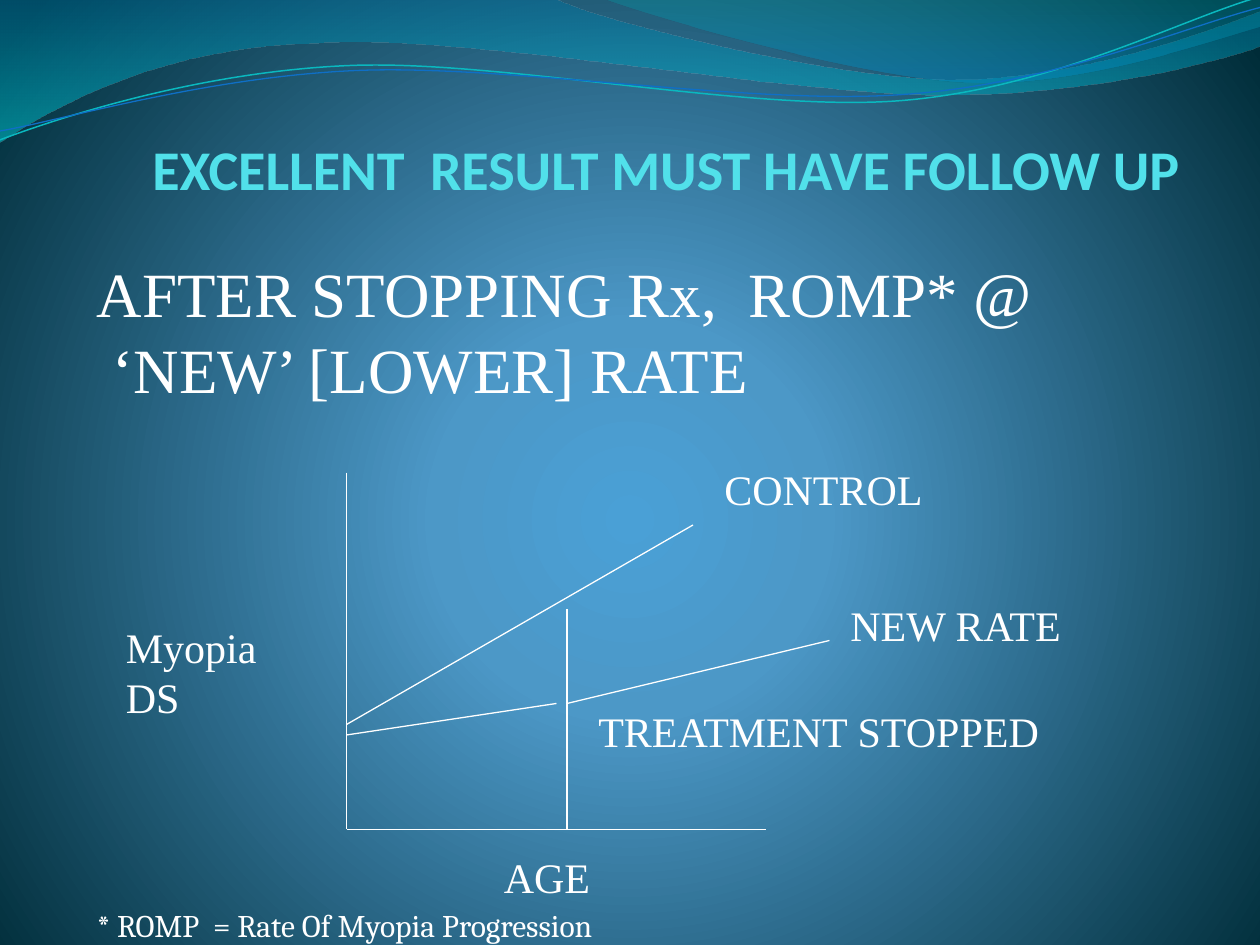
from math import cos, radians, sin

from lxml import etree
from pptx import Presentation
from pptx.dml.color import RGBColor as Rgb
from pptx.enum.shapes import MSO_CONNECTOR as Link
from pptx.enum.text import MSO_ANCHOR as Anchor, MSO_AUTO_SIZE as Fit, PP_ALIGN as Align
from pptx.oxml import parse_xml
from pptx.oxml.ns import nsdecls, qn
from pptx.util import Inches, Pt

HUE = {"text": "FFFFFF", "title": "51E0EA", "teal": "0AB8BF", "blue": "0F6FC6"}
# Gradient stops: position, colour, opacity (all in percent)
GRAD = {
    "back": [(0, "4AA0D6", 100), (25, "4C98C7", 100), (100, "002C38", 100)],
    "wide": [(0, "0074A1", 45), (100, "00C6CF", 55)],
    "right": [(0, "00A1A9", 30), (80, "008BBF", 45)],
}
DOWN = '<a:lin ang="5400000" scaled="0"/>'
ROUND = ('<a:path path="circle"><a:fillToRect l="10000" t="110000" '
         'r="10000" b="100000"/></a:path>')
TILT = 2.7  # degrees by which the thin waves lean to the left

# Curves: a start point, then Bezier triples or straight-line ends
WIDE = [[(0, 0)], [(4.4, -.01)], [(4.76, .17), (6.64, .63), (7.58, .63)],
        [(8.53, .63), (9.58, .26), (10, .09)], [(10.01, .36)],
        [(9.83, .44), (8.7, .76), (7.46, .75)],
        [(6.22, .75), (3.82, .28), (2.57, .34)],
        [(1.29, .36), (.46, .83), (-.01, 1.13)]]
RIGHT = [[(4.79, -.01)], [(5.09, .11), (6.82, .62), (7.69, .65)],
         [(8.56, .69), (9.61, .32), (10, .21)], [(10, 0)]]
TEAL = [[(0, 1.11)], [(.48, .93), (1.58, .57), (2.77, .52)],
        [(3.95, .47), (5.93, .89), (7.13, .8)],
        [(8.33, .71), (9.38, .15), (9.98, -.02)]]
BLUE = [[(0, 1.04)], [(.47, .96), (1.64, .61), (2.83, .56)],
        [(4.03, .51), (5.97, .84), (7.17, .75)],
        [(8.36, .67), (9.41, .21), (10, .06)]]


def grad(name, shade):
    stops = "".join(
        f'<a:gs pos="{pos * 1000}"><a:srgbClr val="{hue}">'
        f'<a:alpha val="{alpha * 1000}"/></a:srgbClr></a:gs>'
        for pos, hue, alpha in GRAD[name])
    return (f'<a:gradFill {nsdecls("a")} rotWithShape="1">'
            f'<a:gsLst>{stops}</a:gsLst>{shade}</a:gradFill>')


def level(curve, mid):
    """Turn a leaning curve upright around its middle."""
    c, s = cos(radians(TILT)), sin(radians(TILT))
    return [[(mid[0] + (x - mid[0]) * c - (y - mid[1]) * s,
              mid[1] + (x - mid[0]) * s + (y - mid[1]) * c) for x, y in part]
            for part in curve]


def wave(shapes, curve, closed):
    dots = [(Inches(x), Inches(y)) for part in curve for x, y in part]
    form = shapes.build_freeform(*dots[0])
    form.add_line_segments(dots[1:], close=closed)
    shape = form.convert_to_shape()
    # Join each triple of line ends into one Bezier segment
    ends = iter(list(shape.element.iter(qn("a:lnTo"))))
    for part in curve[1:]:
        first, *rest = [next(ends) for _ in part]
        if rest:
            first.tag = qn("a:cubicBezTo")
        for end in rest:
            first.append(end[0])
            end.getparent().remove(end)
    shape.shadow.inherit = False
    shape.fill.background()
    return shape


def backdrop(slide):
    fill = slide.background.fill
    fill.solid()
    props = slide.element.cSld.find(qn("p:bg")).find(qn("p:bgPr"))
    props.replace(props.find(qn("a:solidFill")), parse_xml(grad("back", ROUND)))
    # Filled waves
    for curve, name in ((WIDE, "wide"), (RIGHT, "right")):
        shape = wave(slide.shapes, curve, True)
        shape.line.fill.background()
        props = shape.element.spPr
        props.replace(props.find(qn("a:noFill")), parse_xml(grad(name, DOWN)))
    # Thin waves
    pair = slide.shapes.add_group_shape()
    for curve, mid, name, width in ((TEAL, (4.99, .58), "teal", .85),
                                    (BLUE, (5, .59), "blue", .75)):
        shape = wave(pair.shapes, level(curve, mid), False)
        shape.rotation = 360 - TILT
        shape.line.color.rgb = Rgb.from_string(HUE[name])
        shape.line.width = Pt(width)


def style(font, size, face, hue="text"):
    font.size, font.name = Pt(size), face
    font.color.rgb = Rgb.from_string(HUE[hue])


def heading(slide, left, top, width, height):
    title = slide.shapes.title
    title.left, title.top = Inches(left), Inches(top)
    title.width, title.height = Inches(width), Inches(height)
    frame = title.text_frame
    frame.auto_size, frame.word_wrap = Fit.NONE, True
    frame.vertical_anchor = Anchor.BOTTOM
    frame.margin_left = frame.margin_top = frame.margin_bottom = 0
    frame.margin_right = Inches(.02)
    para = frame.paragraphs[0]
    para.alignment = Align.RIGHT
    style(para.font, 40, "Calibri", "title")
    para.font.bold = True
    para.add_run().text = " "
    run = para.add_run()
    run.text = "EXCELLENT  RESULT MUST HAVE FOLLOW UP "
    run.font.size = Pt(32)


def label(slide, box, lines, size=24, face="Times New Roman"):
    frame = slide.shapes.add_textbox(*map(Inches, box)).text_frame
    frame.word_wrap, frame.auto_size = False, Fit.SHAPE_TO_FIT_TEXT
    for i, line in enumerate(lines):
        para = frame.add_paragraph() if i else frame.paragraphs[0]
        para.text = line
        style(para.font, size, face)


def graph(slide, left, top, cell):
    """Line sketch on a grid of square cells, 40 columns by 34 rows."""
    def spot(col, row):
        return left + col * cell, top + row * cell

    lines = [
        ((0, 0), (0, 34)), ((0, 34), (40, 34)),  # axes
        ((0, 24), (33, 5)),                      # control
        ((0, 25), (20, 22)),                     # under treatment
        ((21, 22), (46, 16)),                    # new rate
        ((21, 13), (21, 34)),                    # treatment stopped
    ]
    for start, end in lines:
        ends = map(Inches, spot(*start) + spot(*end))
        line = slide.shapes.add_connector(Link.STRAIGHT, *ends)
        line.line.color.rgb = Rgb.from_string(HUE["text"])
        line.line.width = Pt(.75)
        etree.SubElement(line.element.spPr, qn("a:effectLst"))

    labels = [
        (-22.2, 13.56, 1.24, ["Myopia", "DS"]),
        (13.8, 35.5, .89, ["AGE"]),
        (34.8, -1.44, 1.78, ["CONTROL"]),
        (46.8, 11.5, 1.91, ["NEW RATE"]),
        (22.8, 21.56, 3.75, ["TREATMENT STOPPED"]),
    ]
    for col, row, width, text in labels:
        label(slide, (*spot(col, row), width, .1 + .4 * len(text)), text)


def main():
    deck = Presentation()
    deck.slide_width, deck.slide_height = Inches(10), Inches(7.5)
    slide = deck.slides.add_slide(deck.slide_layouts[5])
    backdrop(slide)
    heading(slide, .9, -.63, 8.59, 2.25)
    graph(slide, 2.75, 3.75, 1 / 12)
    # Statement and footnote share the left edge
    label(slide, (.67, 1.97, 7.71, 1.31),
          ["AFTER STOPPING Rx,  ROMP* @", " ‘NEW’ [LOWER] RATE"], 36)
    label(slide, (.67, 7.14, 4.18, .4),
          ["* ROMP  = Rate Of Myopia Progression"], 18, "Cambria")
    deck.save("out.pptx")


if __name__ == "__main__":
    main()
